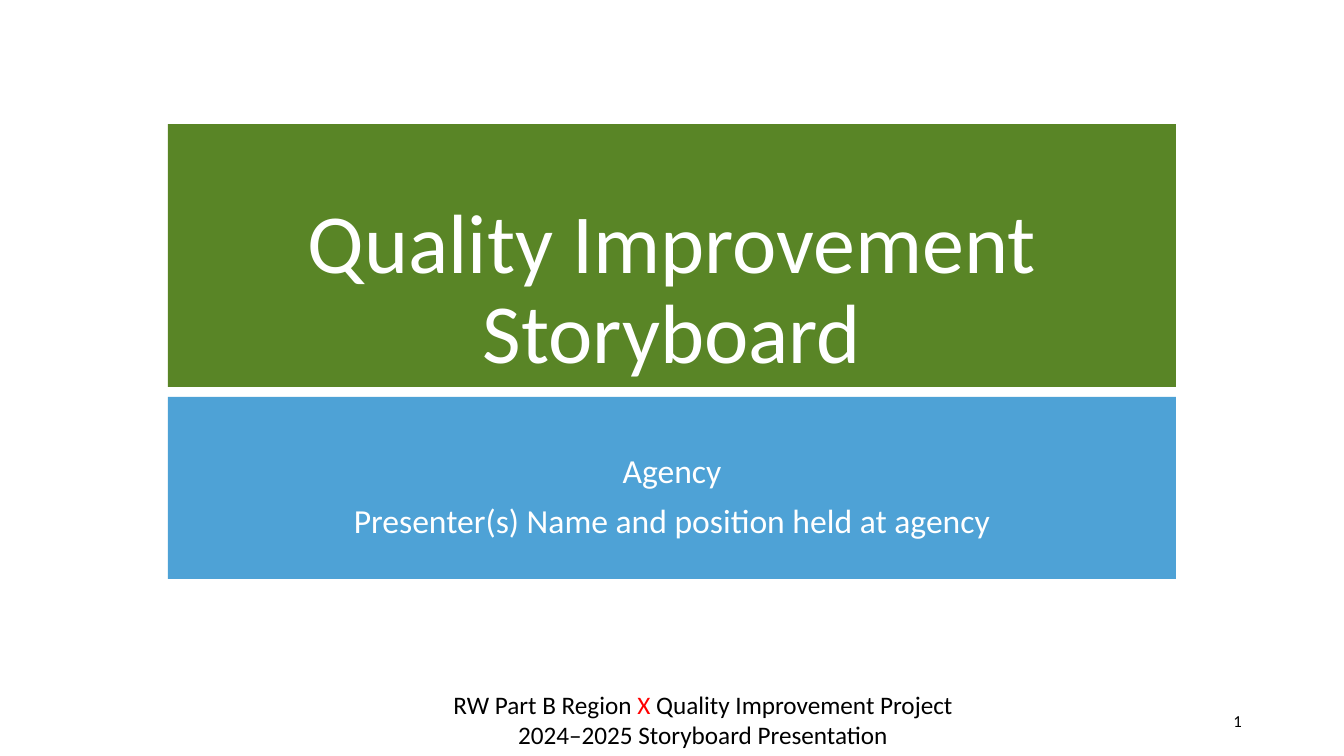
import pptx
import pptx.util
import pptx.dml.color
import pptx.enum.shapes
import pptx.enum.text
import pptx.oxml
from dataclasses import dataclass

Align = pptx.enum.text.PP_ALIGN
Anchor = pptx.enum.text.MSO_ANCHOR
SCALE = 914400 / 100.8


@dataclass(frozen=True)
class Theme:
    font: str = "Calibri"
    green: str = "598526"
    blue: str = "4EA2D6"
    white: str = "FFFFFF"
    black: str = "000000"
    red: str = "FF0000"
    title: int = 60
    body: int = 24
    foot: int = 18
    small: int = 12


def px(count):
    return pptx.util.Emu(round(count * SCALE))


def rgb(code):
    return pptx.dml.color.RGBColor.from_string(code)


class Deck:
    def __init__(self, theme):
        self.theme = theme
        self.show = pptx.Presentation()
        self.show.slide_width, self.show.slide_height = px(1344), px(756)
        self.slide = self.show.slides.add_slide(self.show.slide_layouts[5])

    def style(self, font, size, color):
        font.name = self.theme.font
        font.size = pptx.util.Pt(size)
        font.color.rgb = rgb(color)

    def fill_text(self, shape, lines, size, align=Align.CENTER,
                  anchor=Anchor.TOP, lead=1.0, gap=0):
        """Fill a shape with lines, each a list of (text, colour) runs."""
        frame = shape.text_frame
        frame.word_wrap = True
        frame.auto_size = pptx.enum.text.MSO_AUTO_SIZE.NONE
        frame.vertical_anchor = anchor
        for i, runs in enumerate(lines):
            para = frame.add_paragraph() if i else frame.paragraphs[0]
            para.alignment = align
            para.line_spacing = lead
            para.space_before = pptx.util.Pt(gap if i else 0)
            for text, color in runs:
                run = para.add_run()
                run.text = text
                self.style(run.font, size, color)

    def paint(self, shape, color):
        shape.fill.solid()
        shape.fill.fore_color.rgb = rgb(color)
        shape.line.fill.background()

    def title(self, box, text, fill):
        shape = self.slide.shapes.title
        shape.left, shape.top, shape.width, shape.height = map(px, box)
        self.paint(shape, fill)
        self.fill_text(shape, [[(text, self.theme.white)]], self.theme.title,
                       anchor=Anchor.BOTTOM, lead=0.9)

    def panel(self, box, lines, fill, inset):
        shape = self.slide.shapes.add_shape(
            pptx.enum.shapes.MSO_SHAPE.RECTANGLE, *map(px, box))
        shape.shadow.inherit = False
        self.paint(shape, fill)
        shape.text_frame.margin_top = px(inset)
        self.fill_text(shape, [[(line, self.theme.white)] for line in lines],
                       self.theme.body, lead=0.9, gap=10)

    def label(self, box, lines, size, **look):
        shape = self.slide.shapes.add_textbox(*map(px, box))
        self.fill_text(shape, lines, size, **look)
        return shape

    def number(self, box):
        """Add the slide number as a live field."""
        theme = self.theme
        shape = self.label(box, [[("1", theme.black)]], theme.small,
                           align=Align.RIGHT, anchor=Anchor.MIDDLE)
        run = shape.text_frame.paragraphs[0].runs[0]._r
        field = pptx.oxml.parse_xml(
            '<a:fld xmlns:a="http://schemas.openxmlformats.org/drawingml/2006/main"'
            ' id="{B6F15528-21DE-4FAA-801E-634DDDAF4B2B}" type="slidenum"/>')
        run.addprevious(field)
        field.extend(list(run))
        field.getparent().remove(run)


def main():
    theme = Theme()
    deck = Deck(theme)
    left, width = 168, 1008
    deck.title((left, 124, width, 263), "Quality Improvement Storyboard",
               theme.green)
    deck.panel((left, 397, width, 182),
               ["Agency", "Presenter(s) Name and position held at agency"],
               theme.blue, inset=57)
    deck.number((950, 701, 302, 40))
    deck.label((367, 684, 672, 72), [
        [("RW Part B Region ", theme.black), ("X", theme.red),
         (" Quality Improvement Project", theme.black)],
        [("2024–2025 Storyboard Presentation", theme.black)],
    ], theme.foot)
    deck.show.save("out.pptx")


if __name__ == "__main__":
    main()
